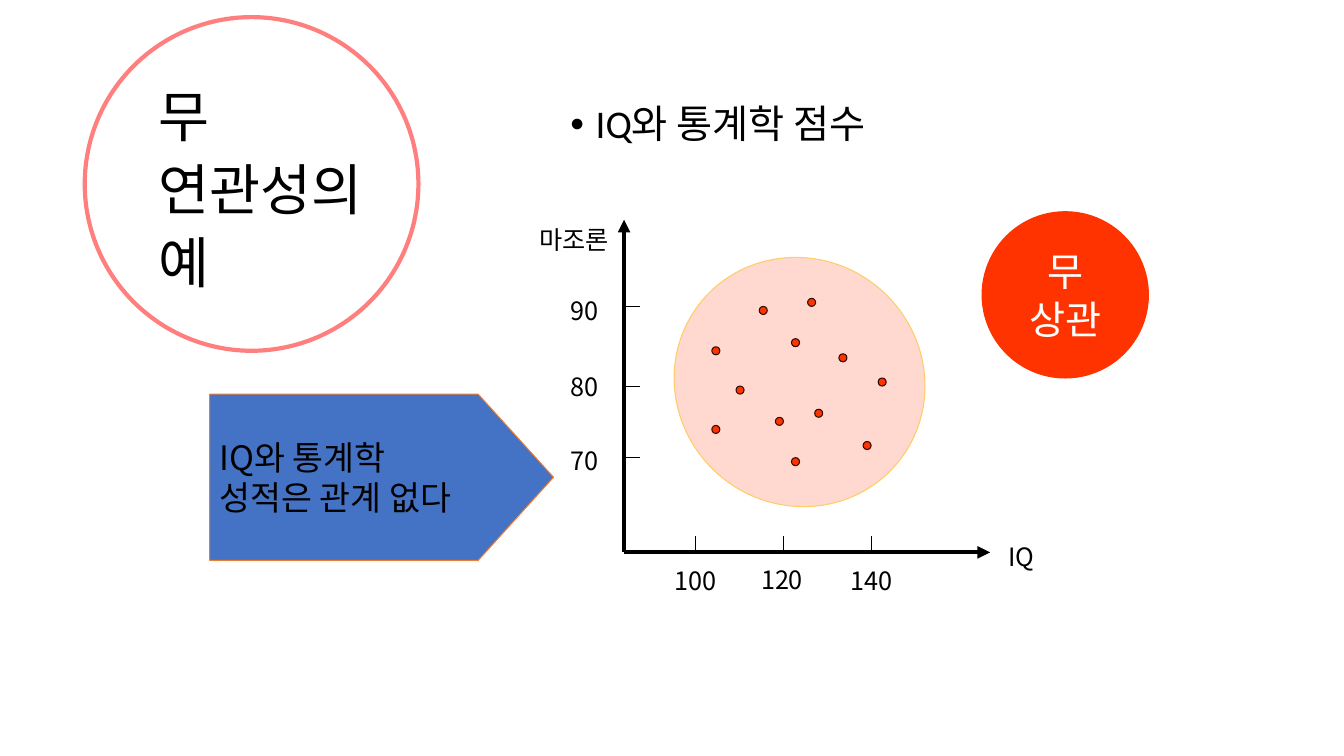
import dataclasses

import lxml.etree
import pptx
import pptx.dml.color
import pptx.enum.shapes
import pptx.enum.text
import pptx.oxml
import pptx.oxml.ns
import pptx.util

Inches = pptx.util.Inches
Pt = pptx.util.Pt
qn = pptx.oxml.ns.qn
SHAPE = pptx.enum.shapes.MSO_SHAPE
ALIGN = pptx.enum.text.PP_ALIGN
ANCHOR = pptx.enum.text.MSO_ANCHOR

COLORS = {
    "black": "000000",
    "white": "FFFFFF",
    "ring": "FF0000",
    "red": "FF3300",
    "gold": "FFCC66",
    "blue": "4472C4",
    "orange": "ED7D31",
}
HEADING_FONT = "Calibri"
LABEL_FONT = "Noto Sans CJK KR"
ORIGIN_X, ORIGIN_Y = 6.19, 5.48
TICK = 0.16
DOT = 0.08


@dataclasses.dataclass
class Line:
    x1: float
    y1: float
    x2: float
    y2: float
    width: float = 0.75
    arrow: bool = False


@dataclasses.dataclass
class Label:
    text: str
    x: float
    y: float
    w: float
    h: float = 0.4


@dataclasses.dataclass
class Figure:
    kind: int
    x: float
    y: float
    w: float
    h: float
    line: str
    fill: str = ""
    width: float = 0.75
    fill_alpha: int = 100
    line_alpha: int = 100
    rotation: float = 0


X_TICKS = [6.9, 7.77, 8.64]
Y_TICKS = [3.04, 3.83, 4.54]
AXES = [
    Line(ORIGIN_X, ORIGIN_Y, ORIGIN_X, 2.18, 3, True),
    Line(ORIGIN_X, ORIGIN_Y, 9.82, ORIGIN_Y, 3, True),
    *[Line(x, ORIGIN_Y, x, ORIGIN_Y - TICK) for x in X_TICKS],
    *[Line(ORIGIN_X, y, ORIGIN_X + TICK, y) for y in Y_TICKS],
]
LABELS = [
    Label("IQ", 9.9, 5.32, 0.47),
    Label("마조론", 5.25, 2.18, 0.96),
    Label("90", 5.56, 2.88, 0.48),
    Label("80", 5.56, 3.63, 0.48),
    Label("70", 5.56, 4.37, 0.48),
    Label("100", 6.59, 5.56, 0.63),
    Label("120", 7.45, 5.55, 0.63),
    Label("140", 8.34, 5.56, 0.63),
]
SCORES = [
    (7.69, 4.14), (8.56, 4.38), (7.85, 3.36), (8.32, 3.51),
    (8.08, 4.06), (7.06, 4.22), (7.53, 3.04), (7.3, 3.83),
    (7.85, 4.54), (8.01, 2.96), (8.71, 3.75), (7.06, 3.44),
]
RING = Figure(SHAPE.OVAL, 0.84, 0.17, 3.31, 3.31, "ring", width=3, line_alpha=50)
CLOUD = Figure(SHAPE.OVAL, 6.67, 2.57, 2.52, 2.44, "gold", "red", fill_alpha=19, rotation=39.7)
ARROW = Figure(SHAPE.PENTAGON, 2.08, 3.91, 3.41, 1.65, "orange", "blue")
BADGE = Figure(SHAPE.OVAL, 9.74, 2.1, 1.65, 1.65, "red", "red")


def rgb(name: str) -> pptx.dml.color.RGBColor:
    return pptx.dml.color.RGBColor.from_string(COLORS[name])


def format_text(tf, size: float, font: str, color: str = "black", align=ALIGN.LEFT) -> None:
    for p in tf.paragraphs:
        p.alignment = align
        for r in p.runs:
            r.font.size = Pt(size)
            r.font.name = font
            r.font.color.rgb = rgb(color)
            ea = lxml.etree.SubElement(r.font._element, qn("a:ea"))
            ea.set("typeface", font)


def set_alpha(fill_element, percent: int) -> None:
    color = fill_element.find(".//" + qn("a:srgbClr"))
    alpha = lxml.etree.SubElement(color, qn("a:alpha"))
    alpha.set("val", str(percent * 1000))


def draw_line(s, line: Line) -> None:
    c = s.shapes.add_connector(
        pptx.enum.shapes.MSO_CONNECTOR.STRAIGHT,
        Inches(line.x1), Inches(line.y1), Inches(line.x2), Inches(line.y2),
    )
    c.line.color.rgb = rgb("black")
    c.line.width = Pt(line.width)
    if line.arrow:
        tail = lxml.etree.SubElement(c.line._get_or_add_ln(), qn("a:tailEnd"))
        tail.set("type", "triangle")
    lxml.etree.SubElement(c._element.spPr, qn("a:effectLst"))


def draw_label(s, label: Label) -> None:
    sp = s.shapes.add_textbox(Inches(label.x), Inches(label.y), Inches(label.w), Inches(label.h))
    tf = sp.text_frame
    tf.word_wrap = False
    tf.auto_size = pptx.enum.text.MSO_AUTO_SIZE.SHAPE_TO_FIT_TEXT
    tf.text = label.text
    format_text(tf, 18, LABEL_FONT)


def draw_figure(s, figure: Figure):
    sp = s.shapes.add_shape(
        figure.kind, Inches(figure.x), Inches(figure.y), Inches(figure.w), Inches(figure.h)
    )
    sp.shadow.inherit = False
    sp.rotation = figure.rotation
    sp.line.color.rgb = rgb(figure.line)
    sp.line.width = Pt(figure.width)
    if figure.line_alpha < 100:
        set_alpha(sp.line._get_or_add_ln(), figure.line_alpha)
    if figure.fill:
        sp.fill.solid()
        sp.fill.fore_color.rgb = rgb(figure.fill)
        if figure.fill_alpha < 100:
            set_alpha(sp._element.spPr.find(qn("a:solidFill")), figure.fill_alpha)
    else:
        sp.fill.background()
    return sp


def write_in(sp, text: str, size: float, color: str, align) -> None:
    tf = sp.text_frame
    tf.word_wrap = False
    tf.vertical_anchor = ANCHOR.MIDDLE
    tf.text = text
    format_text(tf, size, LABEL_FONT, color, align)


def draw_title(s) -> None:
    sp = s.shapes.title
    sp.left, sp.top, sp.width, sp.height = Inches(1.47), Inches(0.7), Inches(2.53), Inches(2.27)
    tf = sp.text_frame
    tf.text = "무\v연관성의\v예"
    tf.vertical_anchor = ANCHOR.MIDDLE
    tf.paragraphs[0].line_spacing = 1.1
    format_text(tf, 39.6, HEADING_FONT)


def draw_topic(s) -> None:
    sp = s.shapes.add_textbox(Inches(5.56), Inches(0.99), Inches(5.52), Inches(0.95))
    tf = sp.text_frame
    tf.word_wrap = True
    tf.text = "IQ와 통계학 점수"
    format_text(tf, 28, HEADING_FONT)
    p = tf.paragraphs[0]
    p.line_spacing = 0.9
    p.space_before = Pt(10)
    pPr = p._p.get_or_add_pPr()
    pPr.set("marL", str(Inches(0.25)))
    pPr.set("indent", str(Inches(-0.25)))
    lxml.etree.SubElement(pPr, qn("a:buFont")).set("typeface", "Arial")
    lxml.etree.SubElement(pPr, qn("a:buChar")).set("char", "•")


def main() -> None:
    prs = pptx.Presentation()
    prs.slide_width, prs.slide_height = Inches(13.33), Inches(7.5)
    s = prs.slides.add_slide(prs.slide_layouts[5])
    draw_title(s)
    draw_topic(s)
    draw_figure(s, RING)
    for line in AXES:
        draw_line(s, line)
    for label in LABELS:
        draw_label(s, label)
    for x, y in SCORES:
        draw_figure(s, Figure(SHAPE.OVAL, x, y, DOT, DOT, "black", "red"))
    draw_figure(s, CLOUD)
    arrow = draw_figure(s, ARROW)
    arrow.adjustments[0] = 0.453
    write_in(arrow, "IQ와 통계학\n성적은 관계 없다", 24, "black", ALIGN.LEFT)
    badge = draw_figure(s, BADGE)
    write_in(badge, "무\n상관", 28, "white", ALIGN.CENTER)
    prs.save("out.pptx")


if __name__ == "__main__":
    main()
